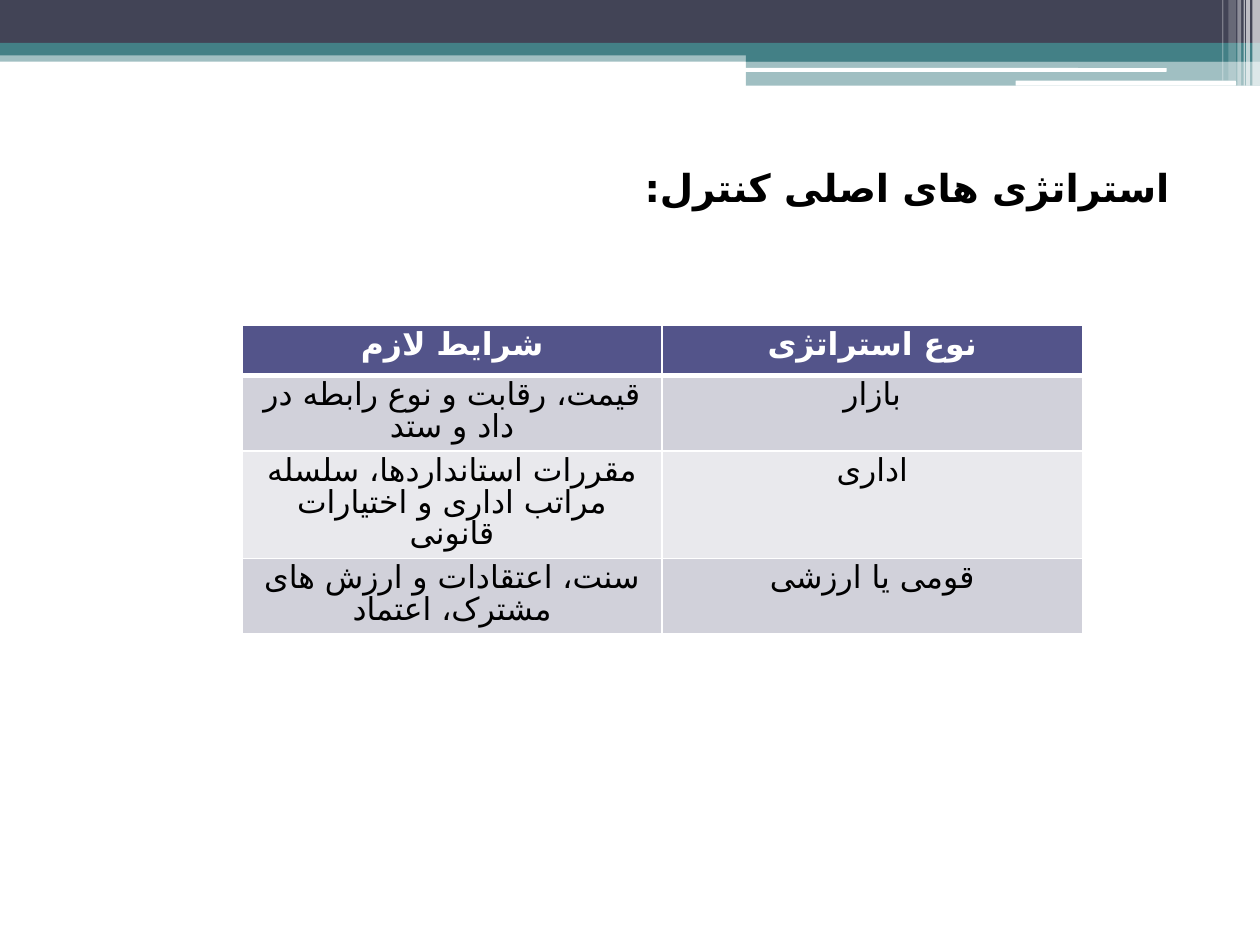
from lxml import etree
from pptx import Presentation
from pptx import util as u
from pptx.dml.color import RGBColor
from pptx.enum import shapes, text
from pptx.oxml.ns import qn

COLORS = {
    "slate": "424456", "teal": "438086", "white": "FFFFFF", "black": "000000",
    "header": "53548A", "dark_band": "D1D1DA", "light_band": "E9E9ED",
}
FONT = "Cambria"
PERSIAN_FONT = "DejaVu Sans"  # Cambria has no Persian letters


def write_text(frame, content, size, color, bold=False, align=text.PP_ALIGN.CENTER):
    """Put one right-to-left paragraph in a text frame and return it."""
    para = frame.paragraphs[0]
    para.alignment = align
    para._p.get_or_add_pPr().set("rtl", "1")
    span = para.add_run()
    span.text = content
    span.font.size = u.Pt(size)
    span.font.bold = bold
    span.font.name = FONT
    span.font.color.rgb = RGBColor.from_string(COLORS[color])
    etree.SubElement(span._r.get_or_add_rPr(), qn("a:cs"), typeface=PERSIAN_FONT)
    return para


def add_border(cell, side, width):
    """Draw a white line on one side (L, R, T or B) of a cell."""
    line = etree.Element(qn(f"a:ln{side}"), w=str(u.Pt(width)))
    fill = etree.SubElement(line, qn("a:solidFill"))
    etree.SubElement(fill, qn("a:srgbClr"), val=COLORS["white"])
    # Borders come before the fill, in the order they are added
    cell._tc.get_or_add_tcPr().insert("LRTB".index(side), line)


deck = Presentation()
deck.slide_width, deck.slide_height = u.Inches(10), u.Inches(7.5)
page = deck.slides.add_slide(deck.slide_layouts[6])

# Header bands and the stripes at the right: left, top, width, height, colour, opacity %
RECT = shapes.MSO_SHAPE.RECTANGLE
ROUNDED = shapes.MSO_SHAPE.ROUNDED_RECTANGLE
header_parts = [
    (RECT, 0, 0.4, 10, 0.09, "teal", 50),
    (RECT, 0, 0, 10, 0.34, "slate", 100),
    (RECT, 0, 0.34, 10, 0.1, "teal", 100),
    (RECT, 5.92, 0.39, 4.08, 0.1, "teal", 100),
    (RECT, 5.92, 0.48, 4.08, 0.2, "teal", 50),
    (ROUNDED, 5.91, 0.54, 3.35, 0.03, "white", 100),
    (ROUNDED, 8.06, 0.64, 1.75, 0.04, "white", 100),
    (RECT, 9.94, 0, 0.06, 0.68, "white", 65),
    (RECT, 9.89, 0, 0.03, 0.68, "white", 65),
    (RECT, 9.87, 0, 0.01, 0.68, "white", 60),
    (RECT, 9.82, 0, 0.03, 0.68, "white", 40),
    (RECT, 9.75, 0, 0.06, 0.64, "white", 20),
    (RECT, 9.7, 0, 0.01, 0.64, "white", 30),
]
for kind, left, top, width, height, color, opacity in header_parts:
    part = page.shapes.add_shape(
        kind, u.Inches(left), u.Inches(top), u.Inches(width), u.Inches(height))
    part.shadow.inherit = False
    part.line.fill.background()
    part.fill.solid()
    part.fill.fore_color.rgb = RGBColor.from_string(COLORS[color])
    if opacity < 100:
        shade = part.fill._xPr.find(".//" + qn("a:srgbClr"))
        etree.SubElement(shade, qn("a:alpha"), val=str(opacity * 1000))

# Heading
box = page.shapes.add_textbox(u.Inches(0.5), u.Inches(1.25), u.Inches(9), u.Inches(5.94))
box.text_frame.word_wrap = True
heading = write_text(box.text_frame, "استراتژی های اصلی کنترل:", size=22,
                     color="black", bold=True, align=text.PP_ALIGN.RIGHT)
heading.space_before = u.Pt(3)
heading._p.pPr.set("marL", str(u.Inches(0.4)))
heading._p.pPr.set("indent", str(u.Inches(-0.28)))

# Strategy table
rows = [
    ("شرایط لازم", "نوع استراتژی"),
    ("قیمت، رقابت و نوع رابطه در داد و ستد", "بازار"),
    ("مقررات استانداردها، سلسله مراتب اداری و اختیارات قانونی", "اداری"),
    ("سنت، اعتقادات و ارزش های مشترک، اعتماد", "قومی یا ارزشی"),
]
row_heights = [0.4, 0.6, 0.85, 0.6]
row_fills = ["header", "dark_band", "light_band", "dark_band"]
table = page.shapes.add_table(
    len(rows), 2, u.Inches(1.92), u.Inches(2.58),
    u.Inches(6.67), u.Inches(sum(row_heights))).table
for r, (labels, height, fill) in enumerate(zip(rows, row_heights, row_fills)):
    table.rows[r].height = u.Inches(height)
    is_header = r == 0
    for c, label in enumerate(labels):
        cell = table.cell(r, c)
        cell.fill.solid()
        cell.fill.fore_color.rgb = RGBColor.from_string(COLORS[fill])
        para = write_text(cell.text_frame, label, size=18, bold=is_header,
                          color="white" if is_header else "black")
        para.line_spacing = u.Pt(18)
        for side in "LRTB":
            thick = (is_header and side == "B") or (r == 1 and side == "T")
            add_border(cell, side, 3 if thick else 1)

deck.save("out.pptx")
